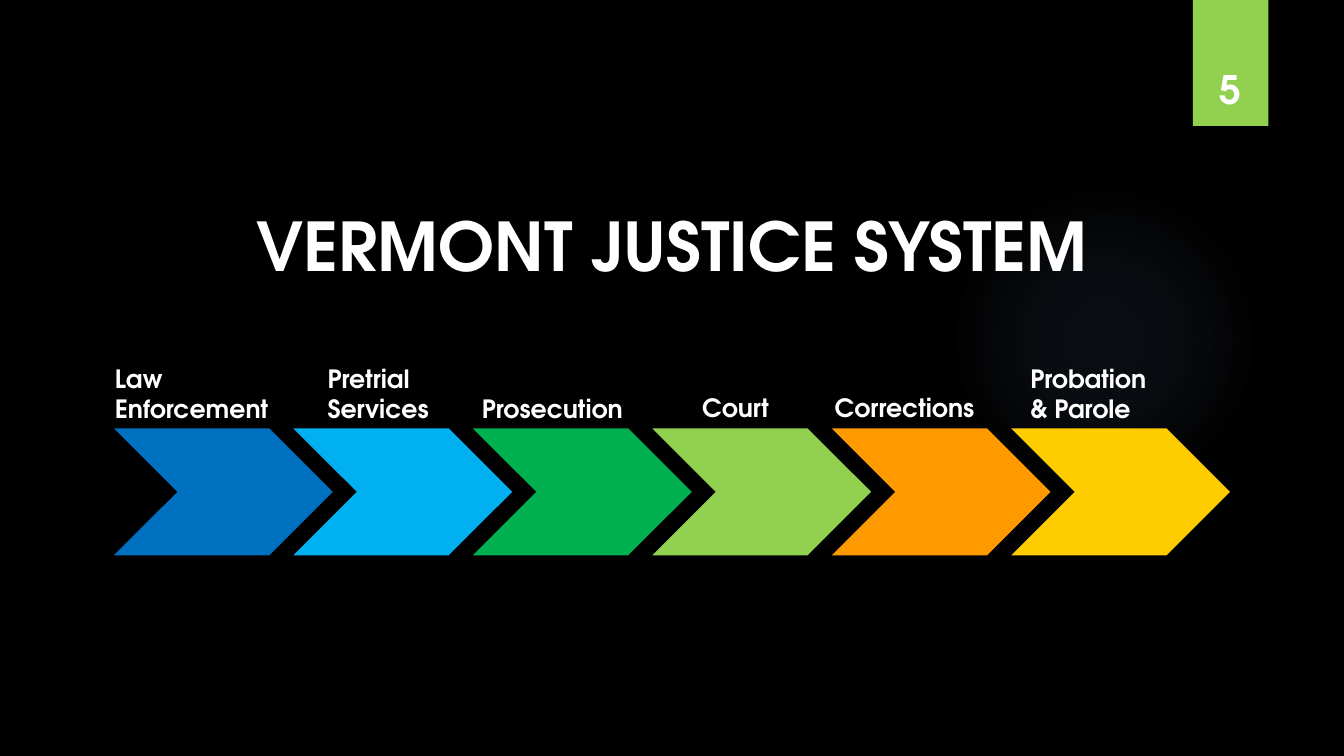
"""Build the Vermont justice system slide with its six-stage chevron flow."""
from lxml import etree
from pptx import Presentation
from pptx.dml.color import RGBColor
from pptx.enum.shapes import MSO_SHAPE
from pptx.enum.text import MSO_ANCHOR, PP_ALIGN
from pptx.oxml import parse_xml
from pptx.oxml.ns import nsdecls
from pptx.util import Inches, Pt

FONT = "TeX Gyre Adventor"
WHITE = "FFFFFF"


def add_shape(kind, left, top, width, height, color):
    shape = slide.shapes.add_shape(
        kind, Inches(left), Inches(top), Inches(width), Inches(height))
    shape.shadow.inherit = False
    shape.fill.solid()
    shape.fill.fore_color.rgb = RGBColor.from_string(color)
    shape.line.fill.background()
    return shape


def add_text(text, left, top, width, height, size,
             align=PP_ALIGN.LEFT, anchor=MSO_ANCHOR.TOP):
    box = slide.shapes.add_textbox(
        Inches(left), Inches(top), Inches(width), Inches(height))
    text_frame = box.text_frame
    text_frame.word_wrap = True
    text_frame.vertical_anchor = anchor
    text_frame.text = text
    for paragraph in text_frame.paragraphs:
        paragraph.alignment = align
        for run in paragraph.runs:
            run.font.name = FONT
            run.font.size = Pt(size)
            run.font.bold = True
            run.font.color.rgb = RGBColor.from_string(WHITE)


presentation = Presentation()
presentation.slide_width = Inches(13.33)
presentation.slide_height = Inches(7.5)
slide = presentation.slides.add_slide(presentation.slide_layouts[6])
slide.background.fill.solid()
slide.background.fill.fore_color.rgb = RGBColor.from_string("000000")

glow = add_shape(MSO_SHAPE.OVAL, 9.41, 1.83, 3.08, 3.08, "82B1E5")
stops = "".join(
    f'<a:gs pos="{position * 1000}"><a:srgbClr val="82B1E5">'
    f'<a:alpha val="{alpha * 1000}"/></a:srgbClr></a:gs>'
    for position, alpha in [(0, 7), (36, 6), (69, 0), (100, 0)])
gradient = parse_xml(
    f'<a:gradFill {nsdecls("a")} rotWithShape="1"><a:gsLst>{stops}</a:gsLst>'
    '<a:path path="circle"><a:fillToRect l="50000" t="50000" r="50000" b="50000"/>'
    '</a:path></a:gradFill>')
glow_properties = glow.element.spPr
glow_properties.replace(glow_properties.find("{*}solidFill"), gradient)

page_tab = add_shape(MSO_SHAPE.RECTANGLE, 11.83, 0, 0.75, 1.25, "92D050")
tab_shadow = parse_xml(
    f'<a:outerShdw {nsdecls("a")} blurRad="{Pt(3)}" dist="{Pt(2)}" dir="5400000" '
    'rotWithShape="0"><a:srgbClr val="000000"><a:alpha val="45000"/></a:srgbClr>'
    '</a:outerShdw>')
page_tab.element.spPr.find("{*}effectLst").append(tab_shadow)

add_text("VERMONT JUSTICE SYSTEM", 0, 1.98, 13.33, 0.91, 48, PP_ALIGN.CENTER)

labels = [
    ("Law Enforcement", 1.04, 3.55, 1.89, 0.71, PP_ALIGN.LEFT),
    ("Pretrial Services", 3.15, 3.55, 1.32, 0.71, PP_ALIGN.LEFT),
    ("Prosecution", 4.68, 3.85, 1.68, 0.4, PP_ALIGN.LEFT),
    ("Court", 6.55, 3.84, 1.49, 0.4, PP_ALIGN.CENTER),
    ("Corrections", 8.18, 3.84, 1.68, 0.4, PP_ALIGN.LEFT),
    ("Probation\n& Parole", 10.12, 3.55, 1.38, 0.71, PP_ALIGN.LEFT),
]
for text, left, top, width, height, align in labels:
    add_text(text, left, top, width, height, 18, align)

stage_colors = ["0070C0", "00B0F0", "00B050", "92D050", "FF9900", "FFCC00"]
for index, color in enumerate(stage_colors):
    add_shape(MSO_SHAPE.CHEVRON, 1.13 + 1.78 * index, 4.25, 2.17, 1.26, color)

add_text("5", 11.74, 0.32, 0.92, 0.84, 28, PP_ALIGN.CENTER, MSO_ANCHOR.BOTTOM)

presentation.save("out.pptx")
